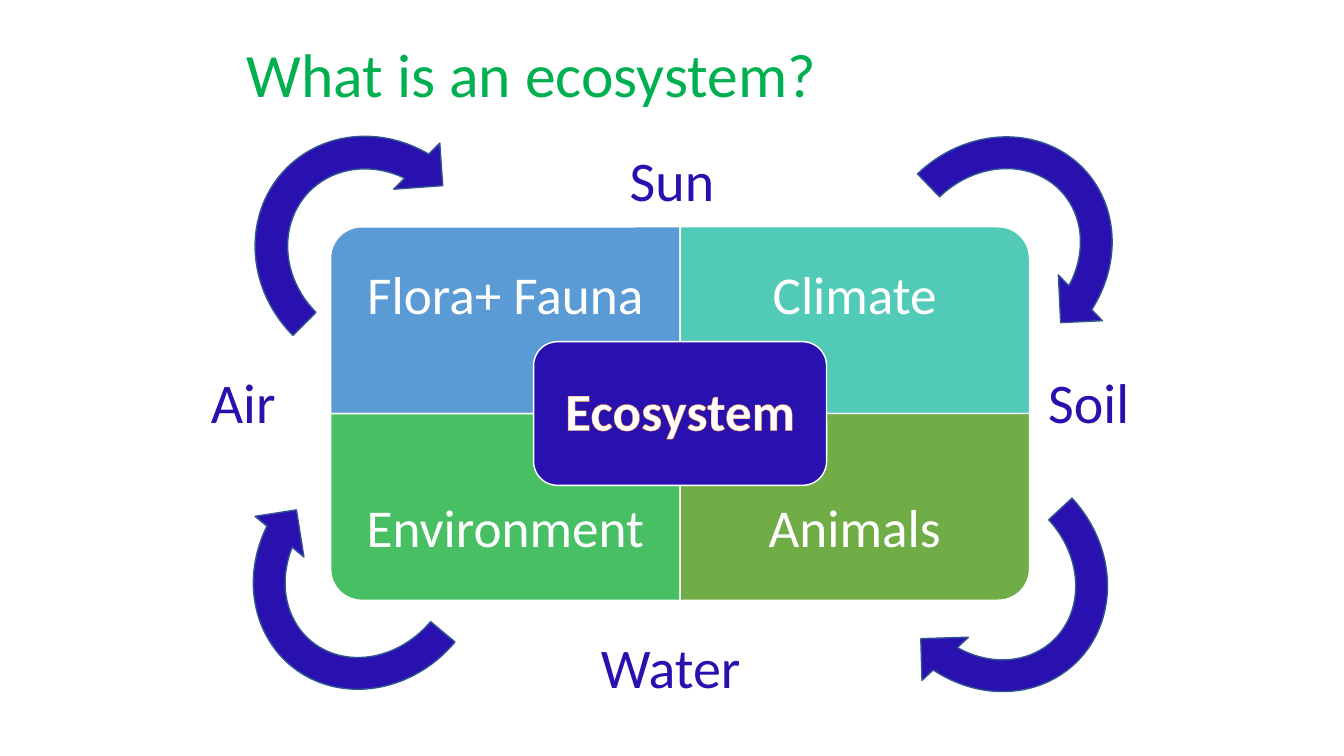
import pptx
import pptx.dml.color
import pptx.enum.shapes
import pptx.enum.text
import pptx.util
from lxml import etree

RGBColor = pptx.dml.color.RGBColor
SHAPE = pptx.enum.shapes.MSO_SHAPE
ALIGN = pptx.enum.text.PP_ALIGN
ANCHOR = pptx.enum.text.MSO_ANCHOR

WHITE = RGBColor(0xFF, 0xFF, 0xFF)
TITLE_GREEN = RGBColor(0x00, 0xB0, 0x50)
INDIGO = RGBColor(0x28, 0x11, 0xAF)
ARROW_EDGE = RGBColor(0x32, 0x54, 0x91)
BLUE = RGBColor(0x5B, 0x9B, 0xD5)
TEAL = RGBColor(0x52, 0xCA, 0xB8)
GREEN = RGBColor(0x49, 0xBF, 0x64)
OLIVE = RGBColor(0x70, 0xAD, 0x47)
ORANGE = RGBColor(0xFF, 0x7A, 0x1F)

deck = pptx.Presentation()
deck.slide_width = pptx.util.Inches(13.33)
deck.slide_height = pptx.util.Inches(7.5)
W, H = deck.slide_width, deck.slide_height
slide = deck.slides.add_slide(deck.slide_layouts[6])

# The four panels meet at (MID_X, MID_Y)
MID_X, MID_Y = W * 0.506, H * 0.547
PANEL_W, PANEL_H = W * 0.26, H * 0.247


def draw(kind, mid_x, mid_y, width, height, fill, edge, turn=0):
    """Draw a filled shape around its centre."""
    shape = slide.shapes.add_shape(kind, int(mid_x - width / 2), int(mid_y - height / 2),
                                   int(width), int(height))
    shape.shadow.inherit = False
    shape.fill.solid()
    shape.fill.fore_color.rgb = fill
    shape.line.color.rgb = edge
    shape.line.width = pptx.util.Pt(1)
    shape.rotation = turn
    return shape


def write(text, holder=None, box=None, size=40, color=WHITE, bold=False, align=ALIGN.CENTER,
          spacing=1.0, inset=0.1, outline=None):
    """Write text in a given shape, or in a new box (centre x, centre y, width, height)."""
    if holder is None:
        mid_x, mid_y, width, height = box
        holder = slide.shapes.add_textbox(int(mid_x - width / 2), int(mid_y - height / 2),
                                          int(width), int(height))
    frame = holder.text_frame
    frame.word_wrap = True
    frame.vertical_anchor = ANCHOR.MIDDLE
    frame.margin_left = frame.margin_right = pptx.util.Inches(inset)
    paragraph = frame.paragraphs[0]
    paragraph.alignment = align
    paragraph.line_spacing = spacing
    run = paragraph.add_run()
    run.text = text
    run.font.name = "Calibri"
    run.font.size = pptx.util.Pt(size)
    run.font.bold = bold
    run.font.color.rgb = color
    if outline is not None:
        namespace = "http://schemas.openxmlformats.org/drawingml/2006/main"
        line = etree.Element(f"{{{namespace}}}ln", w=str(int(pptx.util.Pt(1.42))))
        solid = etree.SubElement(line, f"{{{namespace}}}solidFill")
        etree.SubElement(solid, f"{{{namespace}}}srgbClr", val=str(outline))
        run.font._element.insert(0, line)


# Title
write("What is an ecosystem?", box=(W * 0.503, H * 0.102, W * 0.675, H * 0.167),
      size=44, color=TITLE_GREEN, align=ALIGN.LEFT, spacing=0.9, inset=0.24)

# Panels: side and row are -1 or 1 from the meeting point
panels = [
    ("Flora+ Fauna", -1, -1, BLUE, 270),
    ("Climate", 1, -1, TEAL, 0),
    ("Environment", -1, 1, GREEN, 180),
    ("Animals", 1, 1, OLIVE, 90),
]
for name, side, row, fill, turn in panels:
    panel_x = MID_X + side * PANEL_W / 2
    # A quarter turn swaps width and height
    width, height = (PANEL_H, PANEL_W) if turn % 180 else (PANEL_W, PANEL_H)
    draw(SHAPE.ROUND_1_RECTANGLE, panel_x, MID_Y + row * PANEL_H / 2,
         width, height, fill, WHITE, turn)
    # The caption takes the outer three quarters of its panel
    write(name, box=(panel_x, MID_Y + row * PANEL_H * 0.625, PANEL_W, PANEL_H * 0.75),
          size=38, spacing=0.9, inset=0.3)

# Centre
ecosystem = draw(SHAPE.ROUNDED_RECTANGLE, MID_X, MID_Y, W * 0.218, H * 0.19, INDIGO, WHITE)
write("Ecosystem", holder=ecosystem, size=38, bold=True, spacing=0.9, outline=ORANGE)

# Cycle arrows
cycle = [
    (0.278, 0.337, 0.194, 315),
    (0.737, 0.759, 0.189, 137.1),
    (0.74, 0.336, 0.189, 46.1),
    (0.275, 0.755, 0.189, 219.8),
]
for x, y, width, turn in cycle:
    draw(SHAPE.CIRCULAR_ARROW, W * x, H * y, W * width, H * 0.368, INDIGO, ARROW_EDGE, turn)

# Surrounding elements
elements = [
    ("Sun", 0.5, 0.237, 0.31),
    ("Soil", 0.81, 0.53, 0.08),
    ("Water", 0.499, 0.881, 0.13),
    ("Air", 0.181, 0.53, 0.1),
]
for name, x, y, width in elements:
    write(name, box=(W * x, H * y, W * width, H * 0.103), color=INDIGO)

deck.save("out.pptx")
